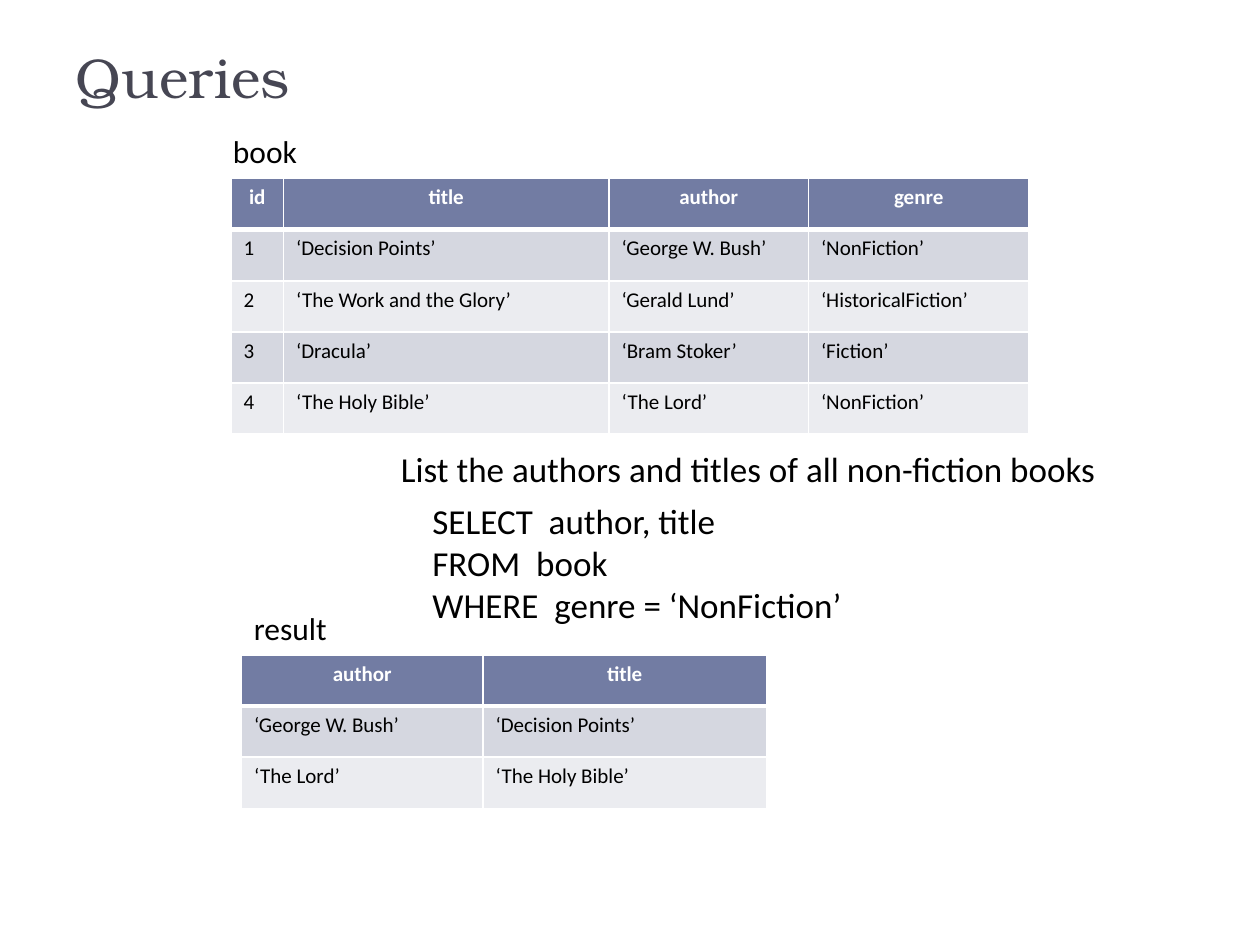
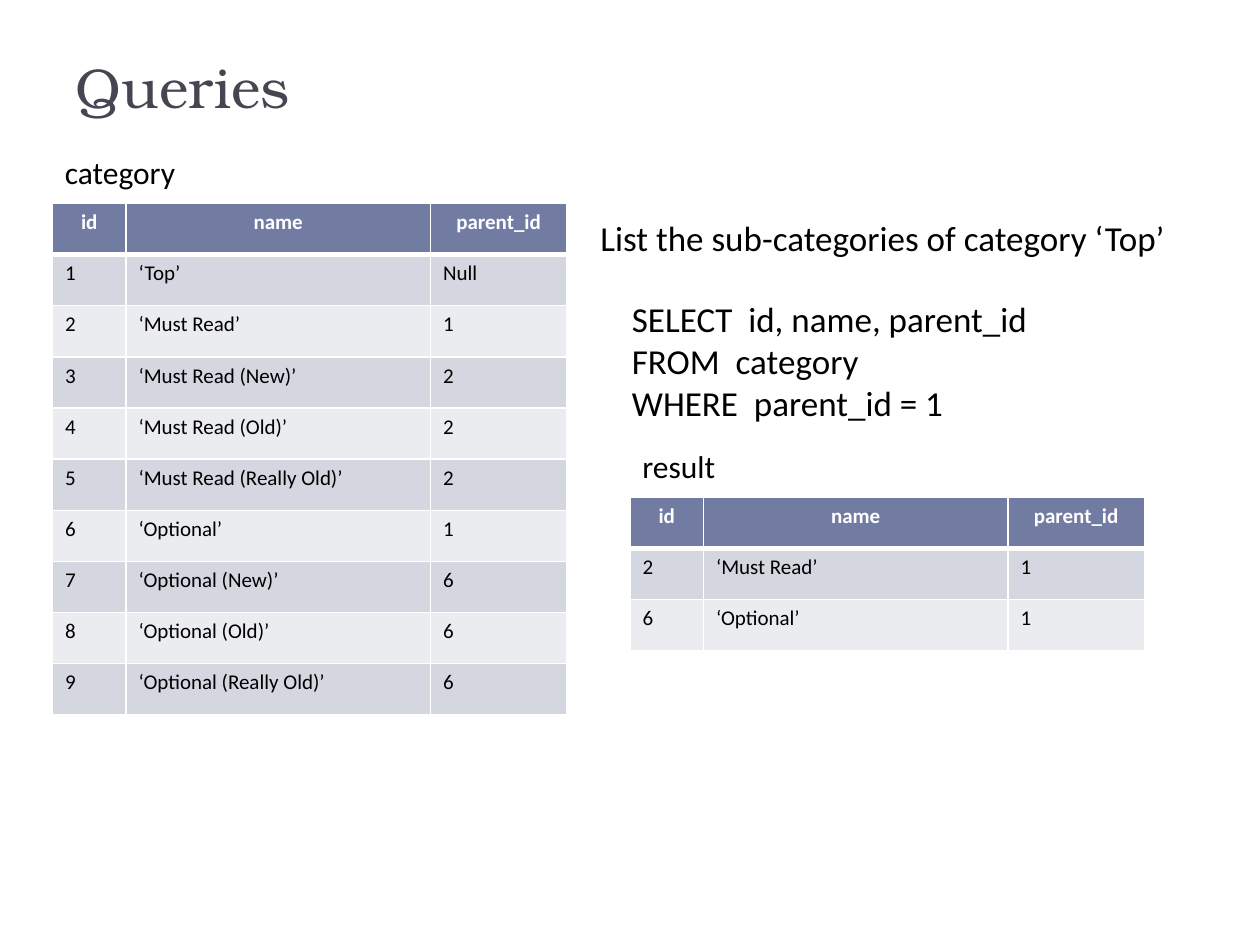
from lxml import etree
from pptx import Presentation
from pptx import util as u
from pptx.dml.color import RGBColor
from pptx.enum import text
from pptx.oxml import ns

PX = 9525  # EMU per px, 96 px to the inch
BLANK_LAYOUT = 6
CATEGORY_COLUMNS = {"id": 56, "name": 232, "parent_id": 104}


def px(*lengths):
    return [u.Emu(length * PX) for length in lengths]


def color(hex_string):
    return RGBColor.from_string(hex_string)


class Slides:
    TITLE_FONT, BODY_FONT = "TeX Gyre Bonum", "Calibri"
    TITLE, INK, WHITE = "464653", "000000", "FFFFFF"
    HEADER, BANDS = "727CA3", ("D5D7E0", "EBECF0")
    LABEL_SIZE, QUERY_SIZE, CELL_SIZE = 18, 20, 12
    ROW_HEIGHT = 39

    def __init__(self):
        self.deck = Presentation()
        self.deck.slide_width, self.deck.slide_height = px(960, 720)
        self.page = None

    def new_page(self, title, top):
        self.page = self.deck.slides.add_slide(self.deck.slide_layouts[BLANK_LAYOUT])
        box = self.page.shapes.add_textbox(*px(48, top, 864, 120))
        frame = box.text_frame
        frame.word_wrap = True
        frame.vertical_anchor = text.MSO_ANCHOR.BOTTOM
        frame.text = title
        self.format(frame, 32, self.TITLE, font=self.TITLE_FONT)

    def format(self, frame, size, ink, bold=False, font=BODY_FONT):
        for para in frame.paragraphs:
            for span in para.runs:
                span.font.name = font
                span.font.size = u.Pt(size)
                span.font.bold = bold
                span.font.color.rgb = color(ink)

    def text(self, wording, size, left, top, width, height):
        """Add black text that does not wrap; each line is a paragraph."""
        box = self.page.shapes.add_textbox(*px(left, top, width, height))
        frame = box.text_frame
        frame.word_wrap = False
        frame.auto_size = text.MSO_AUTO_SIZE.SHAPE_TO_FIT_TEXT
        frame.text = wording
        self.format(frame, size, self.INK)

    def label(self, wording, left, top, width):
        self.text(wording, self.LABEL_SIZE, left, top, width, 38)

    def question(self, wording, left, top, width):
        self.text(wording, self.QUERY_SIZE, left, top, width, 42)

    def query(self, wording, left, top, width):
        self.text(wording, self.QUERY_SIZE, left, top, width, 107)

    def border(self, cell, **widths):
        """Draw white cell edges; widths in points are given by side, L R T B in order."""
        properties = cell._tc.get_or_add_tcPr()
        for side, width in widths.items():
            line = etree.SubElement(properties, ns.qn(f"a:ln{side}"), w=str(u.Pt(width)))
            fill = etree.SubElement(line, ns.qn("a:solidFill"))
            etree.SubElement(fill, ns.qn("a:srgbClr"), val=self.WHITE)

    def table(self, left, top, columns, records):
        """Add a banded table; columns maps each heading to its width."""
        rows = [list(columns), *records]
        widths = list(columns.values())
        frame = self.page.shapes.add_table(
            len(rows), len(widths),
            *px(left, top, sum(widths), len(rows) * self.ROW_HEIGHT))
        grid = frame.table
        for column, width in zip(grid.columns, px(*widths)):
            column.width = width
        for r, values in enumerate(rows):
            grid.rows[r].height = px(self.ROW_HEIGHT)[0]
            header = r == 0
            for c, value in enumerate(values):
                cell = grid.cell(r, c)
                cell.text_frame.text = value
                self.border(cell, L=1, R=1, T=3 if r == 1 else 1, B=3 if header else 1)
                cell.fill.solid()
                cell.fill.fore_color.rgb = color(
                    self.HEADER if header else self.BANDS[(r - 1) % 2])
                if header:
                    cell.text_frame.paragraphs[0].alignment = text.PP_ALIGN.CENTER
                self.format(cell.text_frame, self.CELL_SIZE,
                            self.WHITE if header else self.INK, bold=header)


def book_page(slides):
    slides.new_page("Queries", -32)
    slides.table(176, 136, {"id": 40, "title": 248, "author": 152, "genre": 168}, [
        ("1", "‘Decision Points’", "‘George W. Bush’", "‘NonFiction’"),
        ("2", "‘The Work and the Glory’", "‘Gerald Lund’", "‘HistoricalFiction’"),
        ("3", "‘Dracula’", "‘Bram Stoker’", "‘Fiction’"),
        ("4", "‘The Holy Bible’", "‘The Lord’", "‘NonFiction’"),
    ])
    slides.label("book", 168, 96, 73)
    slides.query("SELECT  author, title\nFROM  book\nWHERE  genre = ‘NonFiction’",
                 320, 376, 348)
    slides.table(184, 499, {"author": 184, "title": 216}, [
        ("‘George W. Bush’", "‘Decision Points’"),
        ("‘The Lord’", "‘The Holy Bible’"),
    ])
    slides.label("result", 184, 459, 81)
    slides.question("List the authors and titles of all non-fiction books", 296, 336, 604)


def category_page(slides):
    categories = [
        ("1", "‘Top’", "Null"),
        ("2", "‘Must Read’", "1"),
        ("3", "‘Must Read (New)’", "2"),
        ("4", "‘Must Read (Old)’", "2"),
        ("5", "‘Must Read (Really Old)’", "2"),
        ("6", "‘Optional’", "1"),
        ("7", "‘Optional (New)’", "6"),
        ("8", "‘Optional (Old)’", "6"),
        ("9", "‘Optional (Really Old)’", "6"),
    ]
    children_of_top = [record for record in categories if record[2] == "1"]
    slides.new_page("Queries", -24)
    slides.table(40, 155, CATEGORY_COLUMNS, categories)
    slides.label("category", 40, 112, 111)
    slides.query("SELECT  id, name, parent_id\nFROM  category\nWHERE  parent_id = 1",
                 472, 222, 326)
    slides.question("List the sub-categories of category ‘Top’", 448, 160, 491)
    slides.table(480, 379, CATEGORY_COLUMNS, children_of_top)
    slides.label("result", 480, 336, 81)


def main():
    slides = Slides()
    book_page(slides)
    category_page(slides)
    slides.deck.save("out.pptx")


if __name__ == "__main__":
    main()
